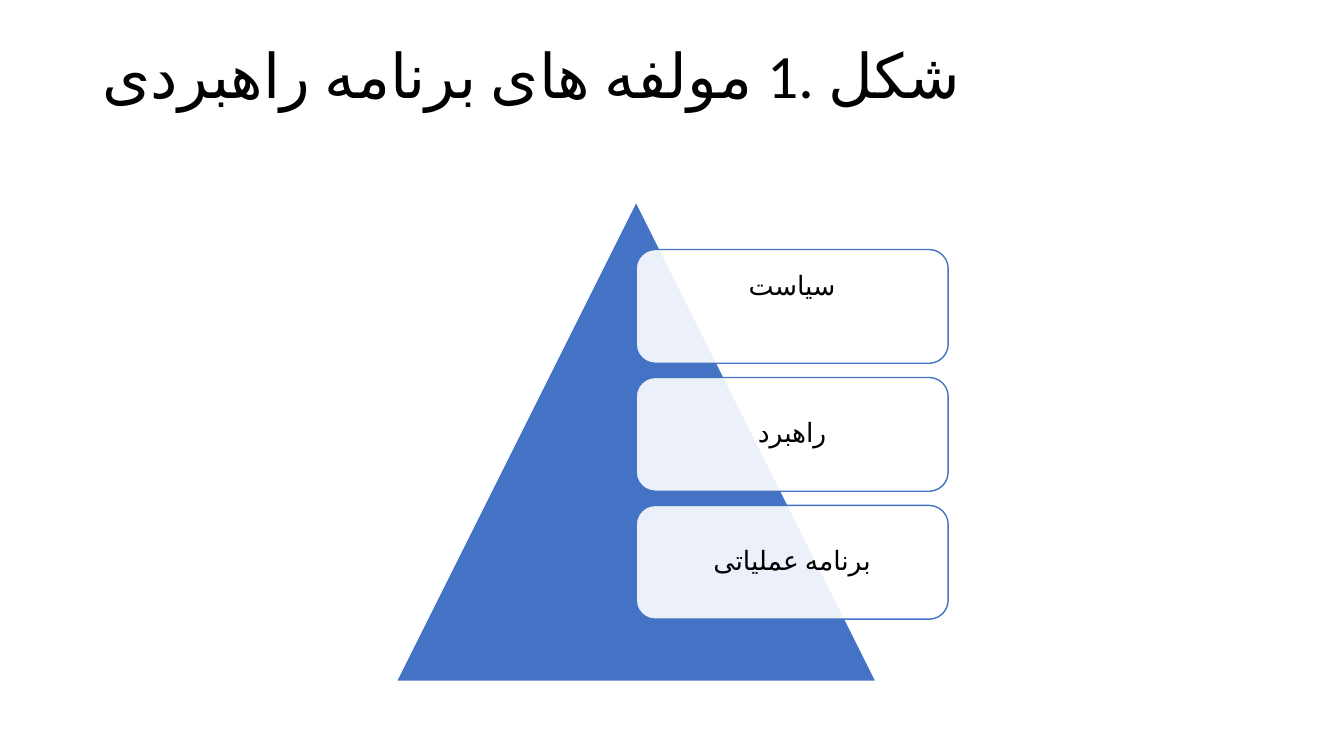
from lxml import etree
from pptx import Presentation
from pptx.dml.color import RGBColor
from pptx.enum.lang import MSO_LANGUAGE_ID
from pptx.enum.shapes import MSO_SHAPE
from pptx.enum.text import MSO_ANCHOR, PP_ALIGN
from pptx.oxml.ns import qn
from pptx.util import Inches, Pt

TRIANGLE, ROUND = MSO_SHAPE.ISOSCELES_TRIANGLE, MSO_SHAPE.ROUNDED_RECTANGLE
TOP, MIDDLE = MSO_ANCHOR.TOP, MSO_ANCHOR.MIDDLE
LEFT, CENTER = PP_ALIGN.LEFT, PP_ALIGN.CENTER
FARSI = MSO_LANGUAGE_ID.FARSI
HEX = {"blue": "4472C4", "white": "FFFFFF", "black": "000000"}
COLORS = {name: RGBColor.from_string(code) for name, code in HEX.items()}

deck = Presentation()
deck.slide_width, deck.slide_height = Inches(13.33), Inches(7.5)
slide = deck.slides.add_slide(deck.slide_layouts[6])
CELL = deck.slide_height / 75


def area(*cells):
    """Turn left, top, width and height in grid cells into lengths."""
    return [round(n * CELL) for n in cells]


def write(shape, text, size, align, frame_format):
    frame = shape.text_frame
    frame.word_wrap = True
    for name, value in frame_format.items():
        setattr(frame, name, value)
    para = frame.paragraphs[0]
    para.alignment, para.line_spacing = align, 0.9
    run = para.add_run()
    run.text = text
    run.font.name, run.font.size = "Calibri", Pt(size)
    run.font.language_id = FARSI
    run.font.color.rgb = COLORS["black"]
    # Farsi letters take the complex-script face
    etree.SubElement(run.font._element, qn("a:cs")).set("typeface", "Calibri")


title = slide.shapes.add_textbox(*area(9.2, 4, 115, 14.5))
write(title, "شکل .1 مولفه های برنامه راهبردی", 44, LEFT, {"vertical_anchor": TOP})

# The cards start at the pyramid's axis and share 80% of its height
left, top, side = 39.3, 20, 47.6
labels = ["سیاست", "راهبرد", "برنامه عملیاتی"]
gap = 1 / 8
high = 0.8 * side / (len(labels) * (1 + gap))

pyramid = slide.shapes.add_shape(TRIANGLE, *area(left, top, side, side))
pyramid.shadow.inherit = False
pyramid.fill.solid()
pyramid.fill.fore_color.rgb = COLORS["blue"]
pyramid.line.color.rgb = COLORS["white"]
pyramid.line.width = Pt(1)

for row, label in enumerate(labels):
    y = top + 0.1 * side + row * high * (1 + gap)
    card = slide.shapes.add_shape(ROUND, *area(left + side / 2, y, 0.65 * side, high))
    card.shadow.inherit = False
    card.fill.solid()
    card.fill.fore_color.rgb = COLORS["white"]
    tint = card.fill._xPr.find(qn("a:solidFill"))[0]
    etree.SubElement(tint, qn("a:alpha")).set("val", "90000")
    card.line.color.rgb = COLORS["blue"]
    card.line.width = Pt(1)
    pad = Inches(0.08)
    write(card, label, 19, CENTER, {
        "vertical_anchor": MIDDLE,
        "margin_left": pad, "margin_right": pad, "margin_top": pad,
        "margin_bottom": Inches(0.47) if row == 0 else pad,
    })

deck.save("out.pptx")
